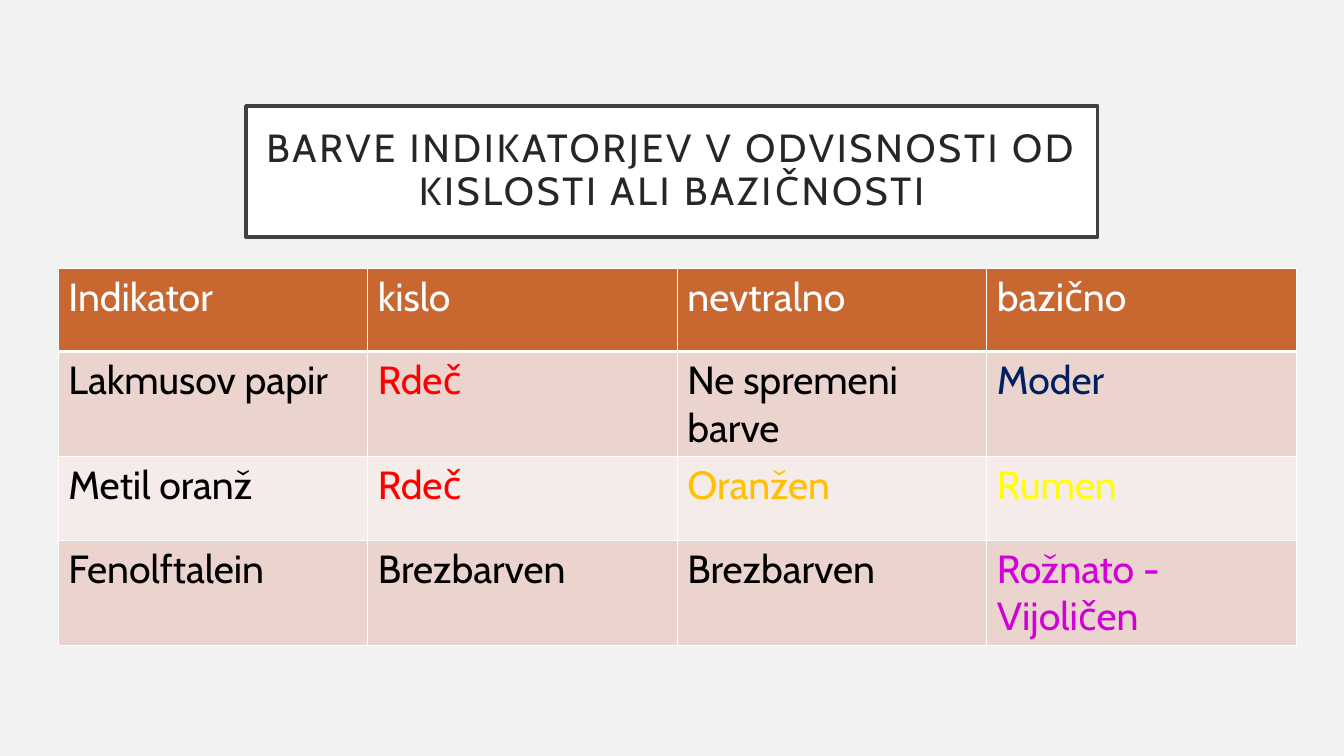
from lxml.etree import SubElement
from pptx import Presentation
from pptx.dml.color import RGBColor
from pptx.enum.text import MSO_ANCHOR as Anchor, MSO_AUTO_SIZE as AutoSize, PP_ALIGN as Align
from pptx.oxml.ns import qn
from pptx.util import Cm, Pt

INK, RED, WHITE = "000000", "FF0000", "FFFFFF"
HEADER_FILL, BAND_FILLS = "C96731", ("EBD3CE", "F5EBE8")
HEADINGS = ("Indikator", "kislo", "nevtralno", "bazično")
INDICATORS = (
    (("Lakmusov papir", INK), ("Rdeč", RED), ("Ne spremeni barve", INK), ("Moder", "002060")),
    (("Metil oranž", INK), ("Rdeč", RED), ("Oranžen", "FFC000"), ("Rumen", "FFFF00")),
    (("Fenolftalein", INK), ("Brezbarven", INK), ("Brezbarven", INK),
     ("Rožnato - Vijoličen", "D100D6")),
)


def rgb(code):
    return RGBColor.from_string(code)


class IndicatorSlide:
    """Build the indicator colour slide in one shared style."""

    font_name = "Cabin"
    font_size = Pt(28)

    def __init__(self, deck, background):
        self.slide = deck.slides.add_slide(deck.slide_layouts[5])
        fill = self.slide.background.fill
        fill.solid()
        fill.fore_color.rgb = rgb(background)

    def style(self, paragraph, color):
        font = paragraph.font
        font.name, font.size, font.bold = self.font_name, self.font_size, False
        font.color.rgb = rgb(color)

    def title(self, text, left, top, width, height):
        heading = self.slide.shapes.title
        heading.left, heading.top, heading.width, heading.height = left, top, width, height
        heading.fill.solid()
        heading.fill.fore_color.rgb = rgb(WHITE)
        heading.line.color.rgb = rgb("404040")
        heading.line.width = Pt(2.5)
        frame = heading.text_frame
        frame.text = text
        frame.word_wrap, frame.auto_size = True, AutoSize.NONE
        frame.vertical_anchor = Anchor.MIDDLE
        frame.margin_left = frame.margin_right = Cm(0.51)
        frame.margin_top = frame.margin_bottom = Cm(0.51)
        paragraph = frame.paragraphs[0]
        paragraph.alignment, paragraph.line_spacing = Align.CENTER, 0.9
        self.style(paragraph, "262626")
        for run in paragraph.runs:
            run.font._element.set("spc", "200")

    def borders(self, cell, bottom_width):
        properties = cell._tc.get_or_add_tcPr()
        for side in ("lnL", "lnR", "lnT", "lnB"):
            width = Pt(bottom_width if side == "lnB" else 1)
            line = SubElement(properties, qn(f"a:{side}"), w=str(width))
            SubElement(SubElement(line, qn("a:solidFill")), qn("a:srgbClr"), val=WHITE)

    def table(self, rows, left, top, width, row_height):
        frame = self.slide.shapes.add_table(
            len(rows), len(rows[0]), left, top, width, row_height * len(rows))
        for row, entries in enumerate(rows):
            fill = BAND_FILLS[(row - 1) % 2] if row else HEADER_FILL
            for column, (text, color) in enumerate(entries):
                cell = frame.table.cell(row, column)
                self.borders(cell, 1 if row else 3)
                cell.fill.solid()
                cell.fill.fore_color.rgb = rgb(fill)
                cell.text = text
                self.style(cell.text_frame.paragraphs[0], color)


def main():
    deck = Presentation()
    deck.slide_width, deck.slide_height = Cm(33.87), Cm(19.05)
    slide = IndicatorSlide(deck, "F2F2F2")
    slide.title("BARVE INDIKATORJEV V ODVISNOSTI OD KISLOSTI ALI BAZIČNOSTI",
                Cm(6.2), Cm(2.67), Cm(21.46), Cm(3.3))
    header = tuple((heading, WHITE) for heading in HEADINGS)
    slide.table((header, *INDICATORS), Cm(1.47), Cm(6.76), Cm(31.2), Cm(2.1))
    deck.save("out.pptx")


if __name__ == "__main__":
    main()
